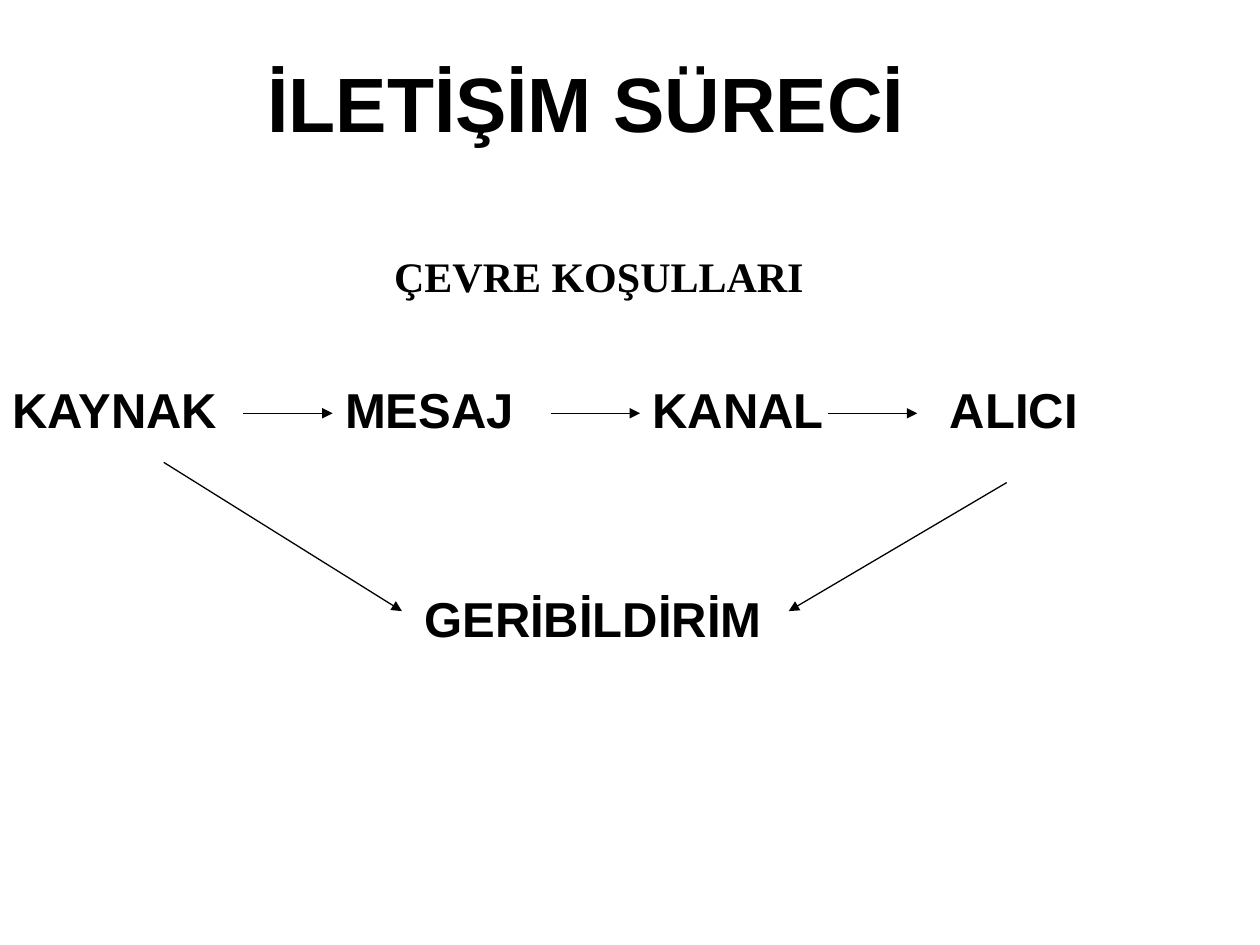
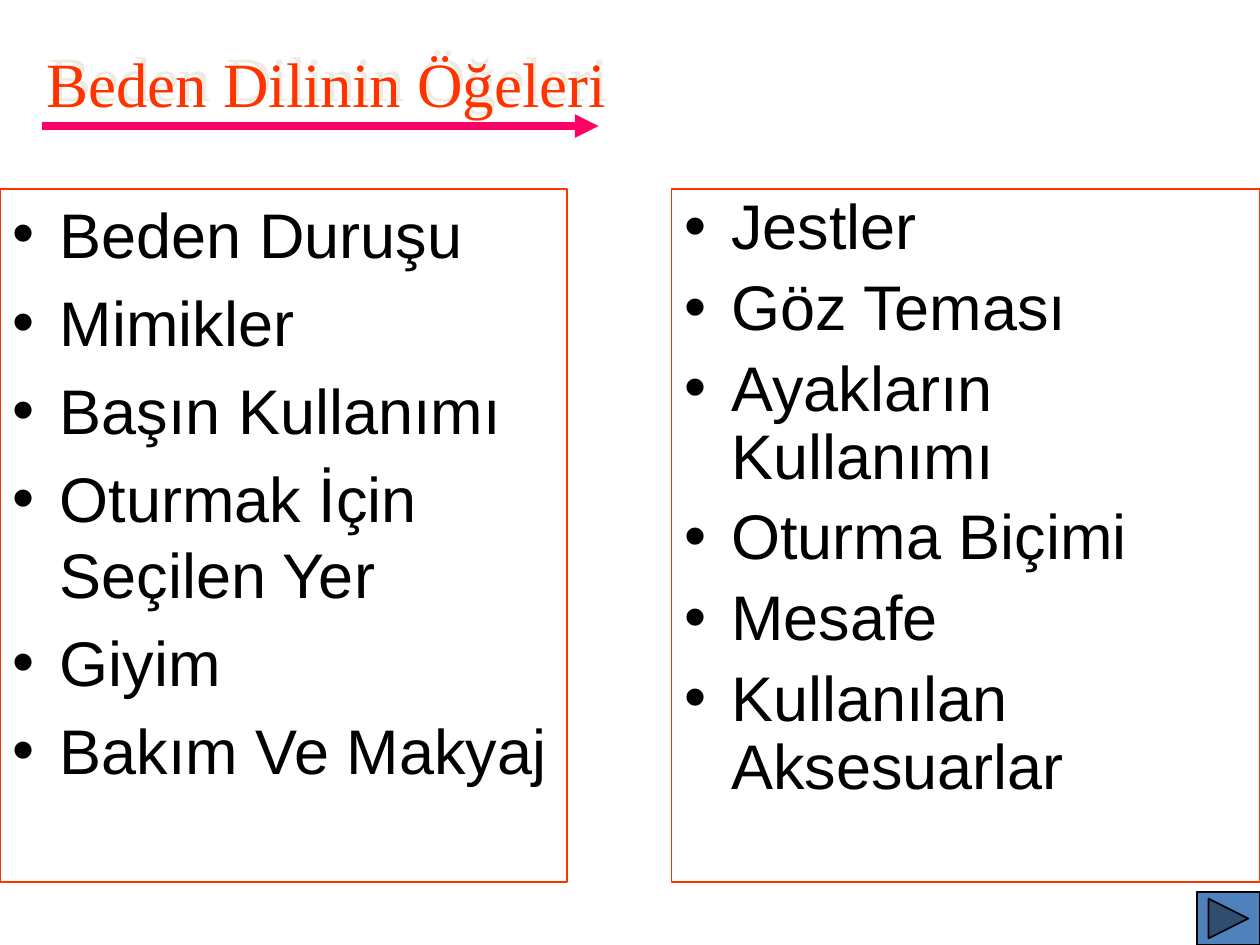
from dataclasses import dataclass

from lxml import etree
from pptx import Presentation
from pptx.dml.color import RGBColor
from pptx.enum.shapes import MSO_CONNECTOR, MSO_SHAPE
from pptx.enum.text import MSO_ANCHOR, MSO_AUTO_SIZE, PP_ALIGN
from pptx.oxml.ns import qn
from pptx.util import Inches, Pt

STRAIGHT = MSO_CONNECTOR.STRAIGHT
FORWARD_BUTTON = MSO_SHAPE.ACTION_BUTTON_FORWARD_OR_NEXT
MIDDLE, TOP = MSO_ANCHOR.MIDDLE, MSO_ANCHOR.TOP
LEFT, CENTER = PP_ALIGN.LEFT, PP_ALIGN.CENTER
NO_RESIZE = MSO_AUTO_SIZE.NONE
LEFT_SIDE, RIGHT_SIDE = 1, 3
TITLE_ONLY, TWO_CONTENT = 5, 3

SLIDE_WIDTH, SLIDE_HEIGHT = Inches(10), Inches(7.5)
COLUMNS, ROWS = 100, 75
COLUMN, ROW = SLIDE_WIDTH / COLUMNS, SLIDE_HEIGHT / ROWS


@dataclass(frozen=True)
class Theme:
    sans: str = "Arial"
    serif: str = "Times New Roman"
    ink: str = "000000"
    accent: str = "FF3300"
    underline: str = "FF0066"
    button: str = "4F81BD"
    title_shadow: str = "EEECE1"
    heading_size: float = 44
    list_size: float = 36
    step_size: float = 28
    note_size: float = 24
    thin: float = 0.75
    button_line: float = 1
    thick: float = 4.5


THEME = Theme()


@dataclass(frozen=True)
class Box:
    """An area in grid columns and rows."""
    left: float
    top: float
    width: float
    height: float

    def inner(self, left, top, width, height):
        return Box(self.left + left, self.top + top, width, height)

    def point(self, column, row):
        return round((self.left + column) * COLUMN), round((self.top + row) * ROW)

    def size(self):
        return round(self.width * COLUMN), round(self.height * ROW)


PAGE = Box(0, 0, COLUMNS, ROWS)


def color(value):
    return RGBColor.from_string(value)


def place(shape, box):
    shape.left, shape.top = box.point(0, 0)
    shape.width, shape.height = box.size()


def format_text(shape, font, size, text_color=THEME.ink, bold=False,
                align=LEFT, anchor=TOP, wrap=True):
    frame = shape.text_frame
    frame.auto_size = NO_RESIZE
    frame.word_wrap = wrap
    frame.vertical_anchor = anchor
    for paragraph in frame.paragraphs:
        paragraph.alignment = align
        for run in paragraph.runs:
            run.font.name = font
            run.font.size = Pt(size)
            run.font.bold = bold
            run.font.color.rgb = color(text_color)


def add_label(slide, box, text, font=THEME.sans, size=THEME.step_size):
    label = slide.shapes.add_textbox(*box.point(0, 0), *box.size())
    label.text_frame.text = text
    format_text(label, font, size, bold=True)
    return label


def add_arrow(slide, start, end, line_color=THEME.ink, width=THEME.thin):
    arrow = slide.shapes.add_connector(STRAIGHT, *start, *end)
    arrow.line.color.rgb = color(line_color)
    arrow.line.width = Pt(width)
    etree.SubElement(arrow.line._get_or_add_ln(), qn("a:tailEnd"), type="triangle")
    etree.SubElement(arrow._element.spPr, qn("a:effectLst"))
    return arrow


def add_text_shadow(shape):
    """Cast a pale shadow up and to the right of unfilled text."""
    effects = etree.SubElement(shape._element.spPr, qn("a:effectLst"))
    shadow = etree.SubElement(effects, qn("a:outerShdw"), dist=str(Inches(0.05)),
                              dir="18000000", algn="ctr", rotWithShape="0")
    etree.SubElement(shadow, qn("a:srgbClr"), val=THEME.title_shadow)


def add_step_chain(slide, box):
    """Four steps in a row, each with an arrow to the next."""
    height = box.height
    source, message, channel, receiver = [
        add_label(slide, box.inner(left, 0, width, height), text)
        for text, left, width in (("KAYNAK", 0, 18.9), ("MESAJ", 26.4, 17.3),
                                  ("KANAL", 50.8, 17.3), ("ALICI", 74.4, 12.2))]
    middle = height / 2
    to_message, to_channel, _ = [
        add_arrow(slide, box.point(start, middle), box.point(start + 7.1, middle))
        for start in (19.3, 43.7, 65.7)]
    to_message.end_connect(message, LEFT_SIDE)
    to_channel.begin_connect(message, RIGHT_SIDE)
    to_channel.end_connect(channel, LEFT_SIDE)


def add_feedback(slide, box):
    """Both ends of the chain lead down to the feedback label."""
    add_label(slide, box.inner(19.7, 9.5, 32.3, 5.7), "GERİBİLDİRİM")
    for start, end in (((0, 0), (18.9, 11.8)), ((66.9, 1.6), (49.6, 11.8))):
        add_arrow(slide, box.point(*start), box.point(*end))


def build_process_slide(presentation, box):
    slide = presentation.slides.add_slide(presentation.slide_layouts[TITLE_ONLY])
    title = slide.shapes.title
    place(title, box.inner(0, 2.5, 93.1, 11.1))
    title.text_frame.text = "İLETİŞİM SÜRECİ"
    format_text(title, THEME.sans, THEME.heading_size, bold=True,
                align=CENTER, anchor=MIDDLE)
    add_label(slide, box.inner(30.3, 19.4, 34.7, 5), "ÇEVRE KOŞULLARI",
              THEME.serif, THEME.note_size)
    add_step_chain(slide, box.inner(0, 29.6, 86.6, 6.4))
    add_feedback(slide, box.inner(13, 36.7, 66.9, 15.2))


def fill_list(placeholder, box, items, line_spacing):
    place(placeholder, box)
    placeholder.text_frame.text = "\n".join(items)
    format_text(placeholder, THEME.sans, THEME.list_size)
    placeholder.line.color.rgb = color(THEME.accent)
    placeholder.line.width = Pt(THEME.thin)
    for paragraph in placeholder.text_frame.paragraphs:
        paragraph.line_spacing = line_spacing


def add_underlined_title(slide, box):
    title = slide.shapes.title
    place(title, box.inner(0, 0, box.width, 7))
    title.text_frame.text = "Beden Dilinin Öğeleri"
    format_text(title, THEME.serif, THEME.list_size, THEME.accent, wrap=False)
    add_text_shadow(title)
    add_arrow(slide, box.point(0.6, 7), box.point(44.8, 7),
              THEME.underline, THEME.thick)


def add_forward_button(slide, box):
    button = slide.shapes.add_shape(FORWARD_BUTTON, *box.point(0, 0), *box.size())
    button.shadow.inherit = False
    button.fill.solid()
    button.fill.fore_color.rgb = color(THEME.button)
    button.line.color.rgb = color(THEME.ink)
    button.line.width = Pt(THEME.button_line)


def build_body_language_slide(presentation, box):
    slide = presentation.slides.add_slide(presentation.slide_layouts[TWO_CONTENT])
    add_underlined_title(slide, box.inner(2.7, 3, 46.5, 8))
    left_list, right_list = slide.placeholders[1], slide.placeholders[2]
    fill_list(left_list, box.inner(0, 15, 45, 55),
              ("Beden Duruşu", "Mimikler", "Başın Kullanımı",
               "Oturmak İçin Seçilen Yer", "Giyim", "Bakım Ve Makyaj"), 1.0)
    fill_list(right_list, box.inner(53.3, 15, 46.7, 55),
              ("Jestler", "Göz Teması", "Ayakların Kullanımı",
               "Oturma Biçimi", "Mesafe", "Kullanılan Aksesuarlar"), 0.9)
    add_forward_button(slide, box.inner(95, 70.8, 5, 4.2))


def main():
    presentation = Presentation()
    presentation.slide_width, presentation.slide_height = SLIDE_WIDTH, SLIDE_HEIGHT
    build_process_slide(presentation, PAGE)
    build_body_language_slide(presentation, PAGE)
    presentation.save("out.pptx")


if __name__ == "__main__":
    main()
